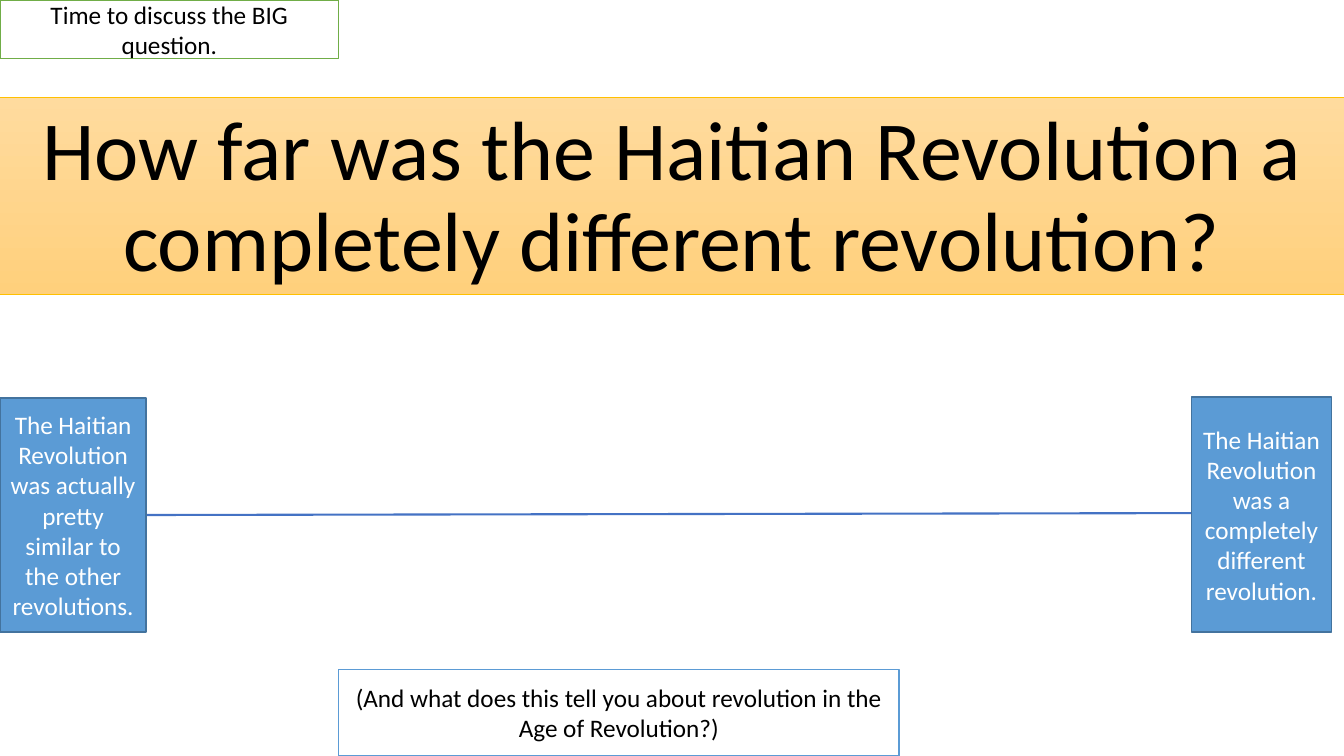
from dataclasses import dataclass

from lxml import etree
from pptx import Presentation
from pptx import util as u
from pptx.dml.color import RGBColor
from pptx.enum import shapes, text
from pptx.oxml import ns
from pptx.shapes.autoshape import Shape
from pptx.slide import Slide

COLUMNS, ROWS = 160, 90
CELL = u.Inches(1 / 12)

COLORS = {
    "white": "FFFFFF",
    "black": "000000",
    "green": "70AD47",
    "blue": "5B9BD5",
    "dark_blue": "43739E",
    "line_blue": "4472C4",
    "gold": "FFC000",
    "pale_orange": "FFDB9E",
    "orange": "FFD07C",
}


@dataclass(frozen=True)
class Box:
    """A bordered text box, placed in columns and rows of the grid."""

    wording: str
    column: float
    row: float
    columns: float
    rows: float
    border: str
    fill: str = "white"
    font_color: str = "black"
    fill_end: str | None = None
    border_points: float = 1
    font_points: float = 18
    line_spacing: float = 1
    anchor: text.MSO_ANCHOR = text.MSO_ANCHOR.MIDDLE


@dataclass(frozen=True)
class Scale:
    """The line of opinion between the two opposing statements."""

    start: tuple[float, float]
    end: tuple[float, float]
    color: str
    points: float


QUESTION = Box(
    "How far was the Haitian Revolution a completely different revolution?",
    -0.6, 11.64, 161.16, 23.4, "gold",
    fill="pale_orange", fill_end="orange", border_points=0.5,
    font_points=60, line_spacing=0.9, anchor=text.MSO_ANCHOR.BOTTOM,
)
PROMPTS = [
    Box("Time to discuss the BIG question.", 0, 0, 40.32, 6.96, "green"),
    Box("(And what does this tell you about revolution in the Age of Revolution?)",
        40.32, 79.68, 66.72, 10.32, "blue"),
]
OPINION_SCALE = Scale((12.84, 61.32), (145.08, 61.08), "line_blue", 1.5)
STATEMENTS = [
    Box("The Haitian Revolution was actually pretty similar to the other revolutions.",
        0, 47.4, 17.4, 27.84, "dark_blue", "blue", "white"),
    Box("The Haitian Revolution was a completely different revolution.",
        141.84, 47.28, 16.68, 27.96, "dark_blue", "blue", "white"),
]


def grid(cells: float) -> u.Emu:
    return u.Emu(round(cells * CELL))


def rgb(name: str) -> RGBColor:
    return RGBColor.from_string(COLORS[name])


def fill_shape(shape: Shape, box: Box) -> None:
    """Fill evenly, or from top to bottom when the box has an end colour."""
    if box.fill_end is None:
        shape.fill.solid()
        shape.fill.fore_color.rgb = rgb(box.fill)
        return
    shape.fill.gradient()
    shape.fill.gradient_angle = 270
    for stop, name in zip(shape.fill.gradient_stops, (box.fill, box.fill_end)):
        stop.color.rgb = rgb(name)


def write_text(shape: Shape, box: Box) -> None:
    frame = shape.text_frame
    frame.word_wrap = True
    frame.vertical_anchor = box.anchor
    paragraph = frame.paragraphs[0]
    paragraph.alignment = text.PP_ALIGN.CENTER
    paragraph.line_spacing = box.line_spacing
    run = paragraph.add_run()
    run.text = box.wording
    run.font.name = "Calibri"
    run.font.size = u.Pt(box.font_points)
    run.font.color.rgb = rgb(box.font_color)


def draw_box(slide: Slide, box: Box) -> None:
    shape = slide.shapes.add_shape(
        shapes.MSO_SHAPE.RECTANGLE,
        grid(box.column), grid(box.row), grid(box.columns), grid(box.rows),
    )
    shape.shadow.inherit = False
    fill_shape(shape, box)
    shape.line.color.rgb = rgb(box.border)
    shape.line.width = u.Pt(box.border_points)
    write_text(shape, box)


def draw_scale(slide: Slide, scale: Scale) -> None:
    connector = slide.shapes.add_connector(
        shapes.MSO_CONNECTOR.STRAIGHT, *map(grid, scale.start + scale.end)
    )
    connector.line.color.rgb = rgb(scale.color)
    connector.line.width = u.Pt(scale.points)
    etree.SubElement(connector._element.spPr, ns.qn("a:effectLst"))


def main() -> None:
    presentation = Presentation()
    presentation.slide_width = grid(COLUMNS)
    presentation.slide_height = grid(ROWS)
    slide = presentation.slides.add_slide(presentation.slide_layouts[6])
    for box in [QUESTION, *PROMPTS]:
        draw_box(slide, box)
    draw_scale(slide, OPINION_SCALE)
    for statement in STATEMENTS:
        draw_box(slide, statement)
    presentation.save("out.pptx")


if __name__ == "__main__":
    main()
